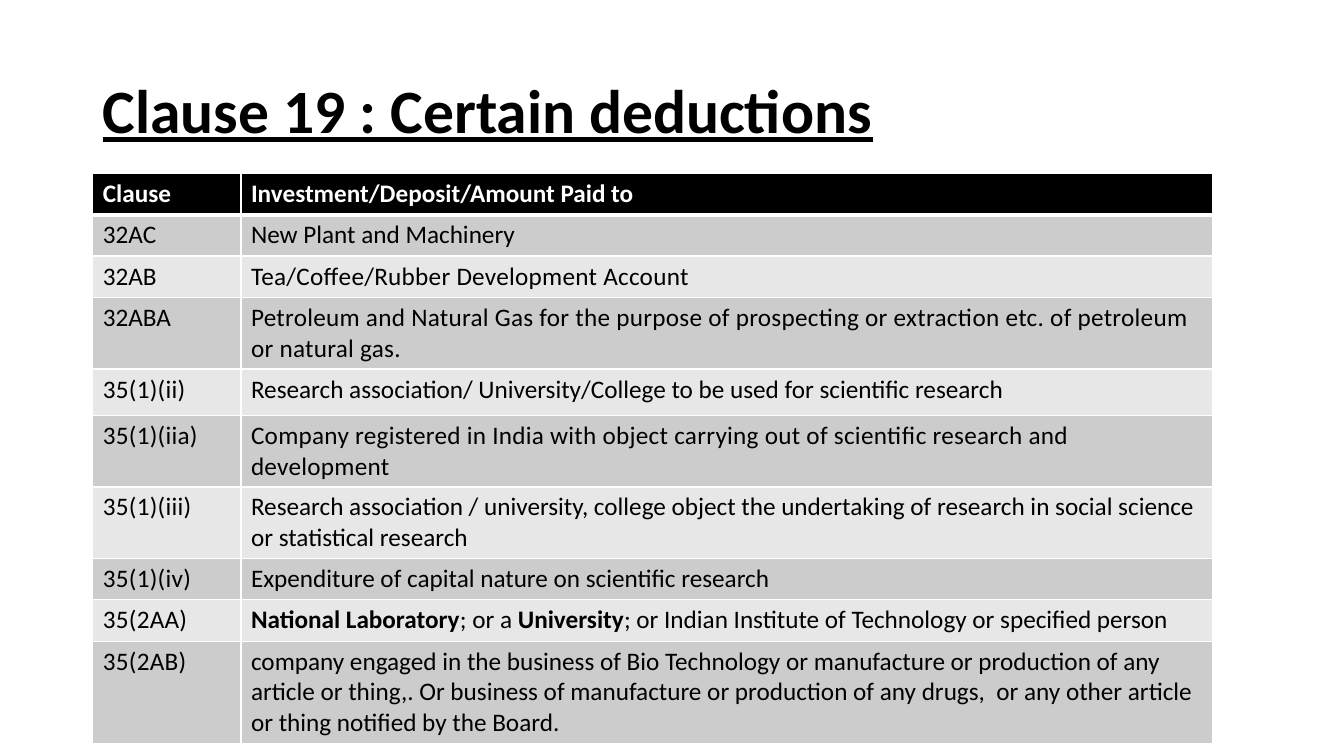
"""Build the slide on the deductions listed under Clause 19."""
from lxml.etree import SubElement
from pptx import Presentation
from pptx.dml.color import RGBColor
from pptx.enum.text import MSO_ANCHOR, PP_ALIGN
from pptx.oxml.ns import qn
from pptx.util import Inches, Pt

COLORS = {"black": "000000", "white": "FFFFFF", "dark_band": "CCCCCC", "light_band": "E7E7E7"}
FONT = "Calibri"
TRACKING = 20
COLUMN_WIDTHS = (1.47, 9.64)
ROW_HEIGHT = 0.41
TALL_ROWS = {"35(1)(ii)": 0.46}
SPACED_PURPOSES = ("32AB", "32ABA", "35(1)(iia)")
HEADINGS = ("Clause", "Investment/Deposit/Amount Paid to")
DEDUCTIONS = [
    ("32AC", ["New Plant and Machinery"]),
    ("32AB", ["Tea/Coffee/Rubber Development Account"]),
    ("32ABA", ["Petroleum and Natural Gas for the purpose of prospecting or extraction etc. "
               "of petroleum or natural gas."]),
    ("35(1)(ii)", ["Research association/ University/College to be used for scientific research"]),
    ("35(1)(iia)", ["Company registered in India with object carrying out of scientific research "
                    "and development"]),
    ("35(1)(iii)", ["Research association / university, college object the undertaking of research "
                    "in social science or statistical research"]),
    ("35(1)(iv)", ["Expenditure of capital nature on scientific research"]),
    ("35(2AA)", [("National Laboratory", True), "; or a ", ("University", True),
                 "; or Indian Institute of Technology or specified person"]),
    ("35(2AB)", ["company engaged in the business of Bio Technology or manufacture or production "
                 "of any article or thing,. Or business of manufacture or production of any drugs,  "
                 "or any other article or thing notified by the Board."]),
]


def add_text(paragraph, text, size=18, color="black", bold=False, underline=False, tracking=0):
    run = paragraph.add_run()
    run.text = text
    run.font.name = FONT
    run.font.size = Pt(size)
    run.font.bold = bold
    run.font.underline = underline
    run.font.color.rgb = RGBColor.from_string(COLORS[color])
    if tracking:
        run.font._element.set("spc", str(tracking))


def add_border(cell, side, width):
    line = SubElement(cell._tc.get_or_add_tcPr(), qn(f"a:{side}"), w=str(Pt(width)))
    SubElement(SubElement(line, qn("a:solidFill")), qn("a:srgbClr"), val=COLORS["white"])


def format_cell(cell, band, top=1, bottom=1):
    for side, width in (("lnL", 1), ("lnR", 1), ("lnT", top), ("lnB", bottom)):
        add_border(cell, side, width)
    cell.fill.solid()
    cell.fill.fore_color.rgb = RGBColor.from_string(COLORS[band])


def add_title(slide, text):
    title = slide.shapes.title
    title.left, title.top = Inches(0.92), Inches(0.4)
    title.width, title.height = Inches(11.5), Inches(1.45)
    title.text_frame.vertical_anchor = MSO_ANCHOR.MIDDLE
    paragraph = title.text_frame.paragraphs[0]
    paragraph.alignment = PP_ALIGN.LEFT
    paragraph.line_spacing = 0.9
    add_text(paragraph, text, size=44, bold=True, underline=True)


def fill_deduction(cells, clause, purpose):
    clause_tracking = TRACKING if clause.startswith("35") else 0
    purpose_tracking = TRACKING if clause in SPACED_PURPOSES else 0
    add_text(cells[0].text_frame.paragraphs[0], clause, tracking=clause_tracking)
    for part in purpose:
        text, bold = (part, False) if isinstance(part, str) else part
        add_text(cells[1].text_frame.paragraphs[0], text, bold=bold, tracking=purpose_tracking)


def add_deductions(slide):
    heights = [ROW_HEIGHT] + [TALL_ROWS.get(clause, ROW_HEIGHT) for clause, _ in DEDUCTIONS]
    table = slide.shapes.add_table(
        len(heights), len(COLUMN_WIDTHS), Inches(0.92), Inches(1.72),
        Inches(sum(COLUMN_WIDTHS)), Inches(sum(heights))).table
    for column, width in zip(table.columns, COLUMN_WIDTHS):
        column.width = Inches(width)
    for row, height in zip(table.rows, heights):
        row.height = Inches(height)
    for cell, heading in zip(table.rows[0].cells, HEADINGS):
        format_cell(cell, "black", bottom=3)
        add_text(cell.text_frame.paragraphs[0], heading, color="white", bold=True)
    for index, (clause, purpose) in enumerate(DEDUCTIONS, start=1):
        cells = list(table.rows[index].cells)
        for cell in cells:
            format_cell(cell, "dark_band" if index % 2 else "light_band", top=3 if index == 1 else 1)
        fill_deduction(cells, clause, purpose)


def main():
    presentation = Presentation()
    presentation.slide_width, presentation.slide_height = Inches(13.33), Inches(7.5)
    slide = presentation.slides.add_slide(presentation.slide_layouts[5])
    add_title(slide, "Clause 19 : Certain deductions")
    add_deductions(slide)
    presentation.save("out.pptx")


if __name__ == "__main__":
    main()
